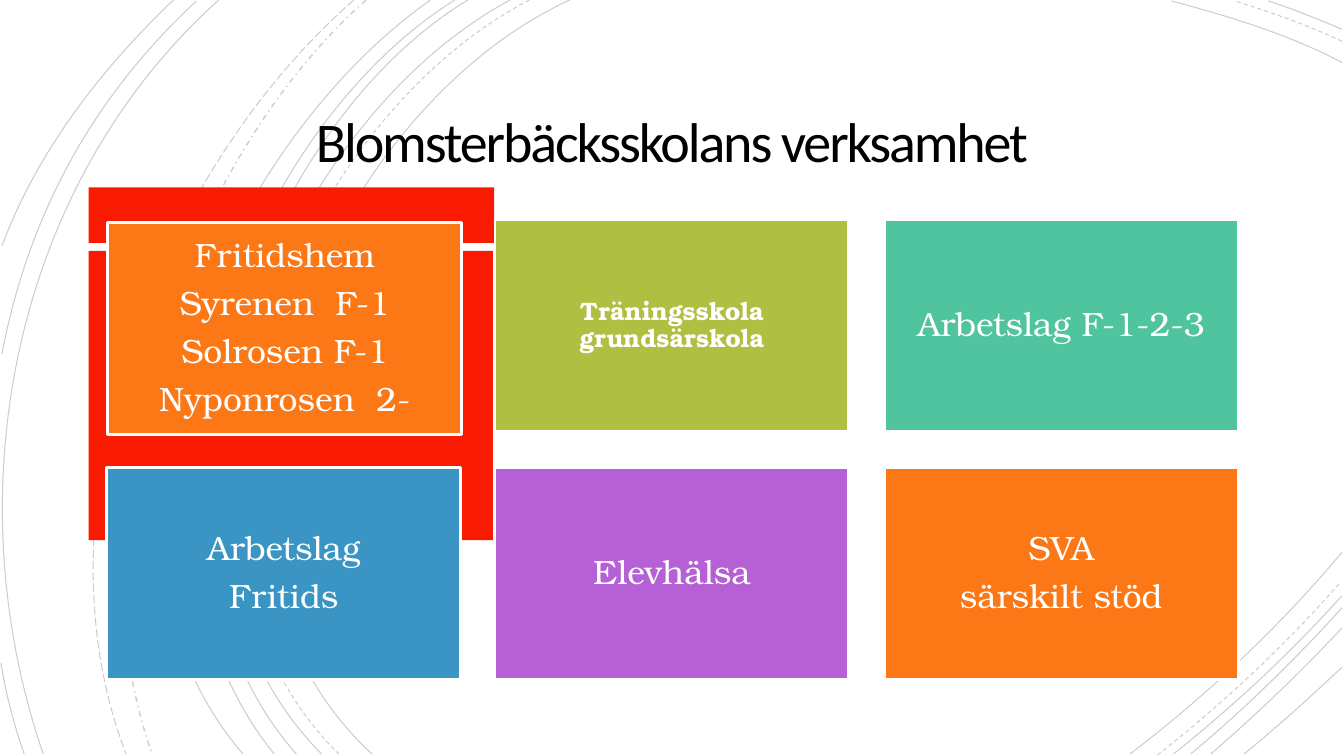
from pptx import Presentation
from pptx.dml.color import RGBColor
from pptx.enum.dml import MSO_LINE
from pptx.enum.shapes import MSO_SHAPE
from pptx.enum.text import MSO_ANCHOR, MSO_AUTO_SIZE, PP_ALIGN
from pptx.oxml.ns import qn
from pptx.util import Pt
from lxml.etree import SubElement

PX = 9144
COLORS = {
    "black": "000000", "white": "FFFFFF", "red": "F81B02", "orange": "FC7715",
    "olive": "AFBF41", "green": "50C49F", "blue": "3B95C4", "purple": "B560D4",
}
TILE_FONT = "TeX Gyre Bonum"
SOLID, DASH = MSO_LINE.SOLID, MSO_LINE.SQUARE_DOT
ARCS = [
    ((565, 0), (315, 115), (143, 540), (369, 748), "solid"),
    ((1331, 62), (1278, 34), (1218, 16), (1162, 1), "solid"),
    ((1121, 748), (1197, 690), (1269, 622), (1331, 548), "solid"),
    ((525, 0), (285, 125), (123, 537), (336, 748), "dash"),
    ((1331, 41), (1297, 25), (1260, 12), (1225, 1), "dash"),
    ((1148, 749), (1213, 698), (1275, 640), (1330, 577), "dash"),
    ((506, 0), (270, 127), (110, 537), (319, 748), "solid"),
    ((1331, 29), (1307, 19), (1283, 9), (1258, 1), "solid"),
    ((1164, 748), (1223, 701), (1280, 648), (1331, 591), "solid"),
    ((464, 0), (244, 133), (110, 541), (294, 748), "solid"),
    ((1181, 748), (1234, 704), (1284, 655), (1331, 603), "solid"),
    ((451, 0), (231, 138), (97, 533), (272, 748), "solid"),
    ((1201, 748), (1246, 709), (1290, 667), (1331, 623), "solid"),
    ((427, 0), (217, 147), (53, 529), (241, 748), "solid"),
    ((1234, 748), (1267, 721), (1299, 692), (1331, 662), "solid"),
    ((363, 0), (176, 166), (65, 509), (151, 748), "dashDot"),
    ((351, 0), (157, 169), (29, 499), (125, 748), "lgDash"),
    ((217, 0), (11, 185), (-46, 490), (43, 748), "solid"),
    ((195, 1), (92, 96), (28, 214), (2, 351), "solid"),
    ((1, 658), (6, 689), (14, 719), (24, 748), "solid"),
    ((172, 0), (100, 69), (37, 150), (2, 244), "solid"),
]
DASHES = {"solid": MSO_LINE.SOLID, "dash": MSO_LINE.DASH,
          "dashDot": MSO_LINE.DASH_DOT, "lgDash": MSO_LINE.LONG_DASH}
TILES = [
    (["Fritidshem", "Syrenen  F-1", "Solrosen F-1", "Nyponrosen  2-"], "orange", (2, 3)),
    (["Träningsskola grundsärskola"], "olive", (0, 0)),
    (["Arbetslag F-1-2-3"], "green", (0, 0)),
    (["Arbetslag", "Fritids"], "blue", (1, 0)),
    (["Elevhälsa"], "purple", (0, 0)),
    (["SVA", "särskilt stöd"], "orange", (0, 0)),
]


def color(name):
    """Return the named colour."""
    return RGBColor.from_string(COLORS[name])


def add_arc(page, left, top, points, dash):
    """Draw one faint cubic curve through start, two controls and end."""
    corners = [((left + x) * PX, (top + y) * PX) for x, y in points]
    builder = page.shapes.build_freeform(*corners[0])
    builder.add_line_segments(corners[1:], close=False)
    arc = builder.convert_to_shape()
    arc.shadow.inherit = False
    arc.fill.background()
    arc.line.color.rgb = color("black")
    arc.line.width = Pt(1 if dash == "dashDot" else 0.75)
    arc.line.dash_style = DASHES[dash]
    tint = next(arc.line._ln.iter(qn("a:srgbClr")))
    SubElement(tint, qn("a:alpha")).set("val", "20000")
    outline = next(arc._element.iter(qn("a:path")))
    curve = SubElement(outline, qn("a:cubicBezTo"))
    for segment in outline.findall(qn("a:lnTo")):
        curve.append(segment[0])
        outline.remove(segment)


def add_arcs(page, left, top):
    """Draw the sweeping background curves."""
    for *points, dash in ARCS:
        add_arc(page, left, top, points, dash)


def add_block(page, left, top, width, height, fill):
    """Add a plain filled rectangle."""
    block = page.shapes.add_shape(
        MSO_SHAPE.RECTANGLE, left * PX, top * PX, width * PX, height * PX)
    block.shadow.inherit = False
    block.fill.solid()
    block.fill.fore_color.rgb = color(fill)
    block.line.fill.background()
    return block


def add_red_panel(page, left, top):
    """Add the red panel, split by a white gap."""
    add_block(page, left, top, 402, 55, "red")
    add_block(page, left, top + 63, 401, 287, "red")


def prepare_frame(box, inset):
    """Centre the text vertically and give equal insets."""
    frame = box.text_frame
    frame.word_wrap = True
    frame.auto_size = MSO_AUTO_SIZE.NONE
    frame.vertical_anchor = MSO_ANCHOR.MIDDLE
    frame.margin_left = frame.margin_right = inset * PX
    frame.margin_top = frame.margin_bottom = inset * PX
    return frame


def add_span(para, text, font, size, ink, spacing):
    """Add one formatted run to a centred paragraph."""
    para.alignment = PP_ALIGN.CENTER
    para.line_spacing = spacing
    span = para.add_run()
    span.text = text
    span.font.name = font
    span.font.size = Pt(size)
    span.font.color.rgb = color(ink)
    return span


def place_title(page, left, top, width, height):
    """Fill the title placeholder and bring it above the background."""
    title = page.shapes.title
    title.left, title.top = left * PX, top * PX
    title.width, title.height = width * PX, height * PX
    para = prepare_frame(title, 25).paragraphs[0]
    span = add_span(para, "Blomsterbäcksskolans verksamhet", "Calibri", 40, "black", 0.85)
    span._r.get_or_add_rPr().set("spc", "-150")
    page.shapes._spTree.append(title._element)


def add_tile(page, left, top, width, height, lines, fill):
    """Add one coloured tile with its lines of text."""
    tile = add_block(page, left, top, width, height, fill)
    tile.line.color.rgb = color("white")
    tile.line.width = Pt(2)
    small = fill == "olive"
    size = 18 if small else 24
    frame = prepare_frame(tile, 7 if small else 10)
    for index, text in enumerate(lines):
        para = frame.add_paragraph() if index else frame.paragraphs[0]
        span = add_span(para, text, TILE_FONT, size, "white", 0.9)
        span.font.bold = small
        para.space_after = Pt(size * 0.35)


def add_tiles(page, left, top):
    """Lay out the tiles in three columns and two rows."""
    for index, (lines, fill, (shift_x, shift_y)) in enumerate(TILES):
        row, column = divmod(index, 3)
        add_tile(page, left + column * 386 + shift_x, top + row * 246 + shift_y,
                 351, 210, lines, fill)


def main():
    """Build and save the slide."""
    deck = Presentation()
    deck.slide_width, deck.slide_height = 1333 * PX, 750 * PX
    page = deck.slides.add_slide(deck.slide_layouts[5])
    page.background.fill.solid()
    page.background.fill.fore_color.rgb = color("white")
    add_arcs(page, 0, 0)
    add_red_panel(page, 88, 186)
    place_title(page, 192, 87, 949, 115)
    add_tiles(page, 105, 218)
    deck.save("out.pptx")


if __name__ == "__main__":
    main()
